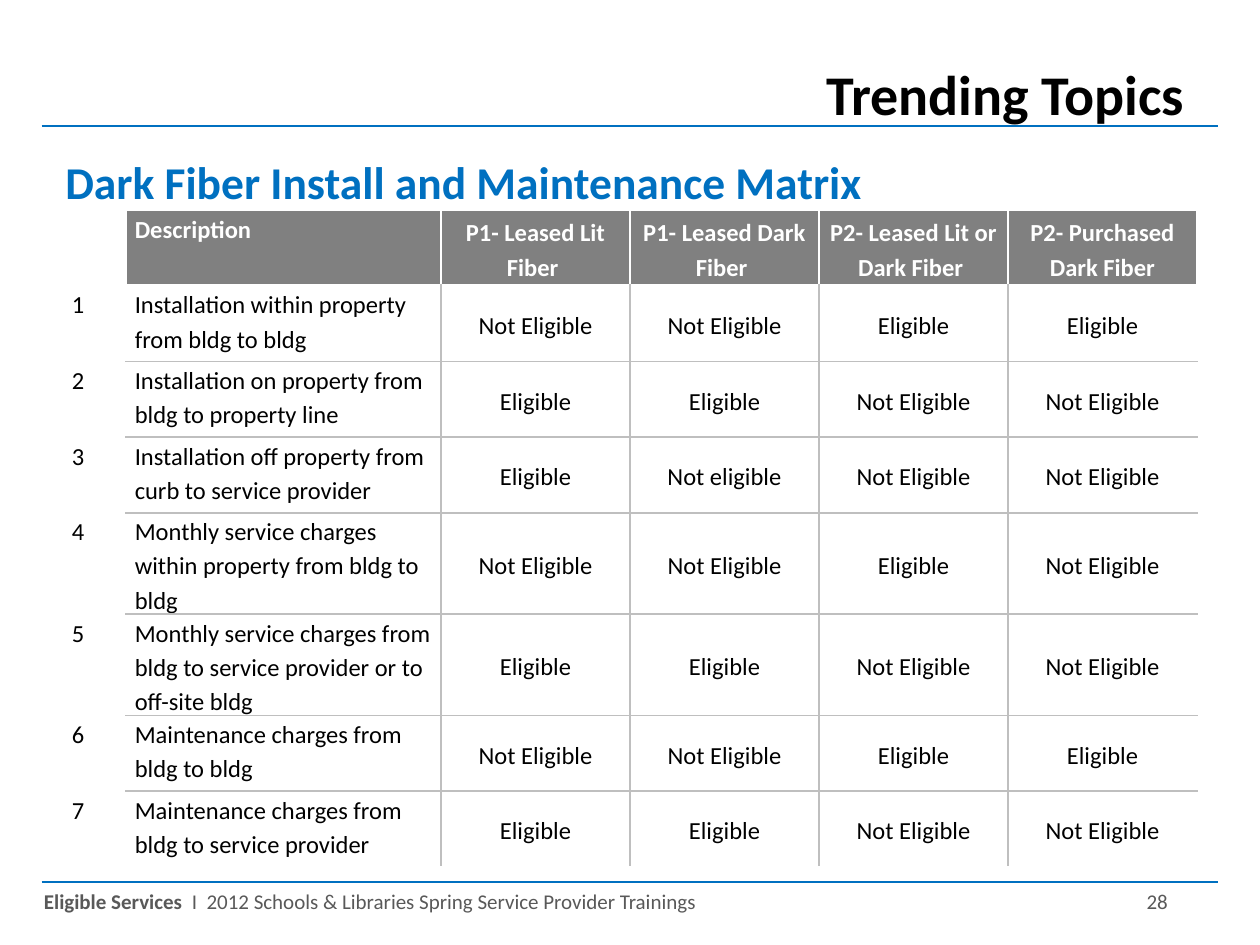
from lxml import etree
from pptx import Presentation
from pptx.dml.color import RGBColor
from pptx.enum.shapes import MSO_CONNECTOR
from pptx.enum.text import MSO_ANCHOR, PP_ALIGN
from pptx.oxml.ns import qn
from pptx.util import Inches, Pt

LEFT, CENTER, RIGHT = PP_ALIGN.LEFT, PP_ALIGN.CENTER, PP_ALIGN.RIGHT
TOP, MIDDLE = MSO_ANCHOR.TOP, MSO_ANCHOR.MIDDLE
STRAIGHT = MSO_CONNECTOR.STRAIGHT
BLACK = RGBColor(0x00, 0x00, 0x00)
WHITE = RGBColor(0xFF, 0xFF, 0xFF)
BLUE = RGBColor(0x00, 0x70, 0xC0)
HEADER_GRAY = RGBColor(0x80, 0x80, 0x80)
RULE_GRAY = RGBColor(0xBF, 0xBF, 0xBF)
FOOTER_GRAY = RGBColor(0x59, 0x59, 0x59)

YES, NO = "Eligible", "Not Eligible"
HEADERS = ["", "Description", "P1- Leased Lit\nFiber ", "P1- Leased Dark Fiber ",
           "P2- Leased Lit or Dark Fiber ", "P2- Purchased Dark Fiber"]
SERVICES = [
    ("Installation within property from bldg to bldg", NO, NO, YES, YES),
    ("Installation on property from bldg to property line", YES, YES, NO, NO),
    ("Installation off property from curb to service provider", YES, "Not eligible", NO, NO),
    ("Monthly service charges within property from bldg to bldg", NO, NO, YES, NO),
    ("Monthly service charges from bldg to service provider or to off-site bldg",
     YES, YES, NO, NO),
    ("Maintenance charges from bldg to bldg", NO, NO, YES, YES),
    ("Maintenance charges from bldg to service provider", YES, YES, NO, NO),
]
COL_WIDTHS = [0.5, 2.5, 1.5, 1.5, 1.5, 1.5]
ROW_HEIGHTS = [0.6, 0.6, 0.6, 0.6, 0.8, 0.8, 0.6, 0.6]


def write(p, text, size=14, color=BLACK, bold=False, align=LEFT, spacing=None):
    """Add a formatted run to a paragraph."""
    p.alignment = align
    if spacing:
        p.line_spacing = spacing
    r = p.add_run()
    r.text = text
    r.font.name = "Calibri"
    r.font.size = Pt(size)
    r.font.bold = bold
    r.font.color.rgb = color


def add_box(s, x, y, w, h):
    """Add a wrapping text box and return its first paragraph."""
    tf = s.shapes.add_textbox(Inches(x), Inches(y), Inches(w), Inches(h)).text_frame
    tf.word_wrap = True
    return tf.paragraphs[0]


def add_rule(s, x, y, w):
    """Draw a horizontal blue rule."""
    line = s.shapes.add_connector(STRAIGHT, Inches(x), Inches(y), Inches(x + w), Inches(y))
    line.line.color.rgb = BLUE
    line.line.width = Pt(1.5)
    etree.SubElement(line._element.spPr, qn("a:effectLst"))


def set_border(cell, side, color, width):
    """Give one side of a cell a solid line."""
    ln = etree.SubElement(cell._tc.get_or_add_tcPr(), qn(f"a:ln{side}"), w=str(Pt(width)))
    fill = etree.SubElement(ln, qn("a:solidFill"))
    etree.SubElement(fill, qn("a:srgbClr"), val=str(color))


def format_cell(cell, row, col):
    """Set the margins, borders, fill and anchor of a matrix cell."""
    cell.margin_left = cell.margin_right = Inches(0.07)
    cell.margin_top = cell.margin_bottom = 0
    cell.vertical_anchor = MIDDLE if col > 1 else TOP
    last_row, last_col = len(SERVICES), len(HEADERS) - 1
    body = row > 0 and col > 0
    gray_sides = {"L": body and col > 1, "R": body and col < last_col,
                  "T": body and row > 1, "B": body and row < last_row}
    for side, gray in gray_sides.items():
        header_edge = (row, side) in ((0, "B"), (1, "T"))
        set_border(cell, side, RULE_GRAY if gray else WHITE, 3 if header_edge else 1)
    if row == 0 and col > 0:
        cell.fill.solid()
        cell.fill.fore_color.rgb = HEADER_GRAY
    else:
        cell.fill.background()


def add_matrix(s, x, y, w, h):
    """Build the eligibility table."""
    rows = [HEADERS] + [(str(n), *service) for n, service in enumerate(SERVICES, 1)]
    table = s.shapes.add_table(len(rows), len(HEADERS), Inches(x), Inches(y),
                               Inches(w), Inches(h)).table
    table.first_row = table.horz_banding = False
    for column, width in zip(table.columns, COL_WIDTHS):
        column.width = Inches(width)
    for table_row, height in zip(table.rows, ROW_HEIGHTS):
        table_row.height = Inches(height)
    for i, texts in enumerate(rows):
        for j, text in enumerate(texts):
            cell = table.cell(i, j)
            format_cell(cell, i, j)
            tf = cell.text_frame
            for k, line in enumerate(text.split("\n")):
                p = tf.add_paragraph() if k else tf.paragraphs[0]
                write(p, line, color=BLACK if i else WHITE, bold=i == 0,
                      align=CENTER if j > 1 else LEFT, spacing=1.15)


def add_heading(s, x, y, w):
    """Place the title, its rule and the subtitle."""
    add_rule(s, x, y + 0.58, w)
    write(add_box(s, x + 3, y, 6.17, 0.58), "Trending Topics", size=32, bold=True, align=RIGHT)
    write(add_box(s, x + 0.09, y + 0.75, 9, 0.67), "Dark Fiber Install and Maintenance Matrix",
          size=26, color=BLUE, bold=True)


def add_footer(s, x, y, w):
    """Place the footer rule, caption and page number."""
    add_rule(s, x, y, w)
    p = add_box(s, x - 0.08, y, 9.42, 0.34)
    tabs = etree.SubElement(p._p.get_or_add_pPr(), qn("a:tabLst"))
    etree.SubElement(tabs, qn("a:tab"), pos=str(Inches(8.92)), algn="r")
    write(p, "Eligible Services  ", size=12, color=FOOTER_GRAY, bold=True)
    write(p, "I  2012 Schools & Libraries Spring Service Provider Trainings\t28",
          size=12, color=FOOTER_GRAY)


def main():
    """Build and save the slide."""
    prs = Presentation()
    prs.slide_width, prs.slide_height = Inches(10), Inches(7.5)
    s = prs.slides.add_slide(prs.slide_layouts[6])
    add_footer(s, 0.33, 7, 9.34)
    add_matrix(s, 0.5, 1.67, 9, 5.23)
    add_heading(s, 0.33, 0.42, 9.34)
    prs.save("out.pptx")


if __name__ == "__main__":
    main()
